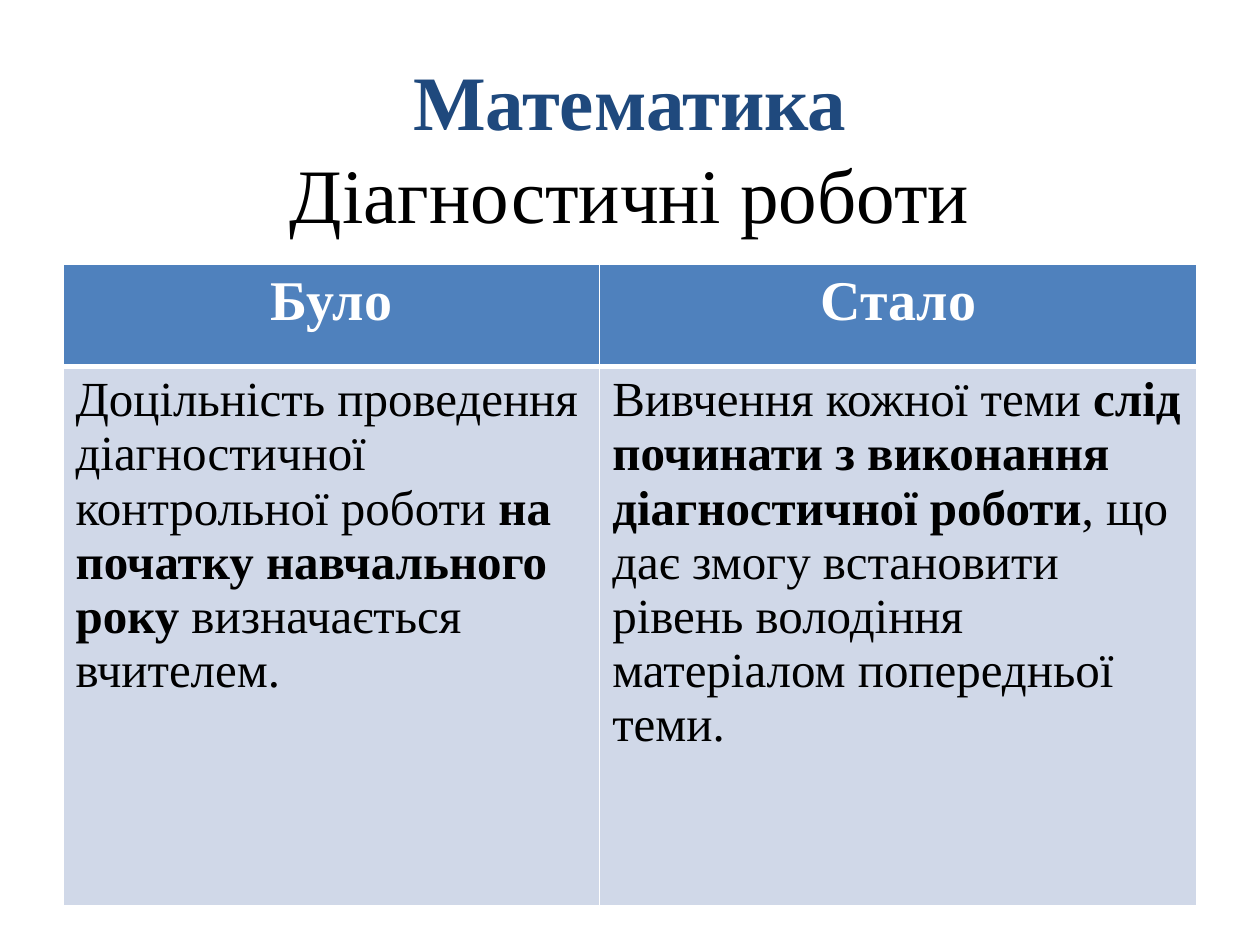
"""Builds a slide that compares diagnostic tests in mathematics before and now."""
from dataclasses import dataclass

from lxml.etree import SubElement
from pptx import Presentation
from pptx.dml.color import RGBColor
from pptx.enum.text import MSO_ANCHOR as Anchor, PP_ALIGN as Align
from pptx.oxml.ns import qn
from pptx.util import Pt

FONT = "Times New Roman"
WHITE, BLACK, NAVY, BLUE, PALE = "FFFFFF", "000000", "1F497D", "4F81BD", "D0D8E8"


@dataclass
class Span:
    text: str
    bold: bool = False


@dataclass
class Column:
    width: float
    heading: str
    body: list[Span]


COLUMNS = [
    Column(306.72, "Було", [
        Span("Доцільність проведення діагностичної контрольної роботи "),
        Span("на початку навчального року ", True),
        Span("визначається вчителем."),
    ]),
    Column(341.28, "Стало", [
        Span("Вивчення кожної теми "),
        Span("слід починати з виконання діагностичної роботи", True),
        Span(", що дає змогу встановити рівень володіння матеріалом попередньої теми."),
    ]),
]
ROW_HEIGHTS = [58.32, 308.16]


def rgb(color: str) -> RGBColor:
    return RGBColor.from_string(color)


def style(font, size: float, color: str) -> None:
    font.name, font.size = FONT, Pt(size)
    font.color.rgb = rgb(color)


def add_spans(p, spans: list[Span], size: float, color: str) -> None:
    style(p.font, size, color)
    for span in spans:
        r = p.add_run()
        r.text = span.text
        style(r.font, size, color)
        r.font.bold = span.bold


def set_borders(cell, bottom: float) -> None:
    tc_pr = cell._tc.get_or_add_tcPr()
    widths = {"lnL": 1, "lnR": 1, "lnT": 1, "lnB": bottom}
    for i, (side, width) in enumerate(widths.items()):
        ln = SubElement(tc_pr, qn(f"a:{side}"), w=str(Pt(width)))
        fill = SubElement(ln, qn("a:solidFill"))
        SubElement(fill, qn("a:srgbClr"), val=WHITE)
        tc_pr.insert(i, ln)


def fill_cell(cell, spans: list[Span], size: float, color: str, fill: str,
              align: Align, bottom: float) -> None:
    cell.fill.solid()
    cell.fill.fore_color.rgb = rgb(fill)
    set_borders(cell, bottom)
    p = cell.text_frame.paragraphs[0]
    p.alignment = align
    add_spans(p, spans, size, color)


def add_title(s) -> None:
    tf = s.shapes.add_textbox(Pt(36), Pt(21.6), Pt(648), Pt(123.84)).text_frame
    tf.word_wrap = True
    tf.vertical_anchor = Anchor.MIDDLE
    p = tf.paragraphs[0]
    p.alignment = Align.CENTER
    add_spans(p, [Span("Математика", True)], 44, NAVY)
    p.add_line_break()
    add_spans(p, [Span("Діагностичні роботи")], 44, BLACK)


def add_comparison(s, columns: list[Column]) -> None:
    table = s.shapes.add_table(2, len(columns), Pt(36), Pt(151.2),
                               Pt(648), Pt(sum(ROW_HEIGHTS))).table
    for row, height in zip(table.rows, ROW_HEIGHTS):
        row.height = Pt(height)
    for i, column in enumerate(columns):
        table.columns[i].width = Pt(column.width)
        fill_cell(table.cell(0, i), [Span(column.heading, True)], 32, WHITE,
                  BLUE, Align.CENTER, 3)
        fill_cell(table.cell(1, i), column.body, 28, BLACK, PALE, Align.LEFT, 1)


def main() -> None:
    prs = Presentation()
    prs.slide_width, prs.slide_height = Pt(720), Pt(540)
    s = prs.slides.add_slide(prs.slide_layouts[6])
    add_title(s)
    add_comparison(s, COLUMNS)
    prs.save("out.pptx")


if __name__ == "__main__":
    main()
